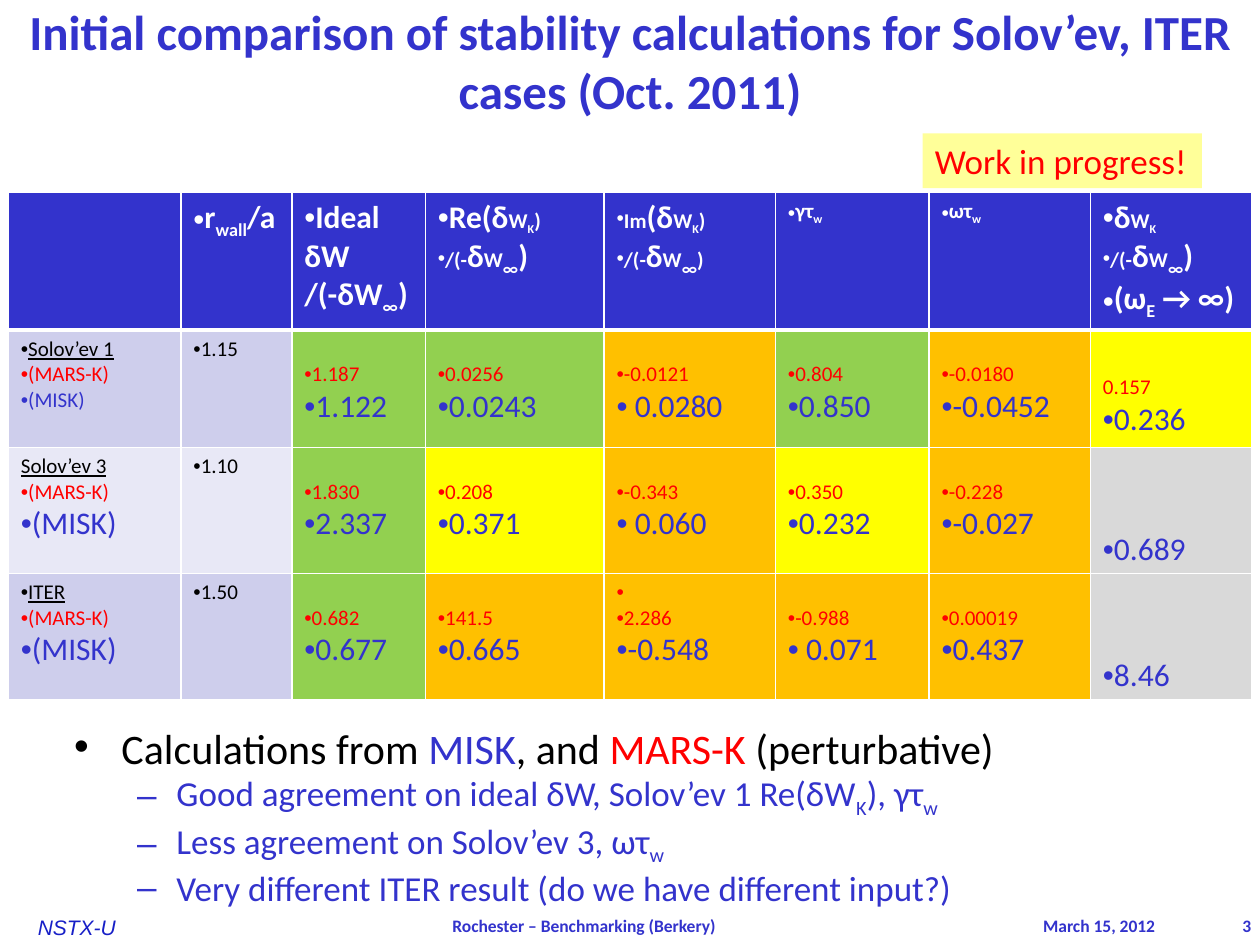
from pptx import Presentation
from pptx.dml.color import RGBColor as RGB
from pptx.enum.shapes import MSO_SHAPE as Shape
from pptx.enum.text import MSO_ANCHOR as Anchor, PP_ALIGN as Align
from pptx.oxml import parse_xml
from pptx.oxml.ns import nsdecls
from pptx.util import Pt


class Theme:
    face, alt = "Calibri", "Arial"
    blue, red, black, white = "3333CC", "FF0000", "000000", "FFFFFF"
    logo, note = "171FC7", "FFFF99"
    band = ["CECEEC", "E8E8F6", "CECEEC"]
    fill = {"G": "92D050", "Y": "FFFF00", "O": "FFC000", "N": "D9D9D9"}
    title, head, lead, item, big, small, foot = 28, 18, 24, 20, 18, 12, 10


T = Theme
LINE = 1.22  # line height per point of type

# Content. A run is (text, size, colour, flags): b bold, i italic, u underline, s subscript
TITLE = "Initial comparison of stability calculations for Solov’ev, ITER cases (Oct. 2011)"
NOTE = "Work in progress!"
FOOT = [  # text, box, alignment, size, colour, face, flags, anchor
    ("NSTX-U", (21.6, 522.7, 62.6, 14.4), Align.LEFT, T.small, T.logo, T.alt, "i", Anchor.TOP),
    ("Rochester – Benchmarking (Berkery)", (64, 518, 539.3, 21.6), Align.CENTER,
     T.foot, T.blue, T.face, "b", Anchor.MIDDLE),
    ("March 15, 2012", (504, 518, 156, 21.6), Align.RIGHT,
     T.foot, T.blue, T.face, "b", Anchor.MIDDLE),
    ("3", (559, 518, 156, 21.6), Align.RIGHT,
     T.foot, T.blue, T.face, "b", Anchor.MIDDLE),
]


def head(text, size=T.head, flags=""):
    return text, size, T.white, "b" + flags


# Header fragments shared by several columns
W = head("W", T.small)
K = head("K", T.small, "s")
INF = head("∞", T.head, "s")
END = head(")", T.small)
PER = [head("/(-", T.small), head("δ"), W, INF]
TAU = head("w", T.small, "s")

HEAD = [  # per column: lines of (bullet, runs)
    [],
    [("•", [head("r"), head("wall", T.head, "s"), head("/a")])],
    [("•", [head("Ideal δW")]), ("", [head("/(-δW"), INF, head(")")])],
    [("•", [head("Re(δ"), W, K, END]), ("•", PER + [head(")")])],
    [("•", [head("Im", T.small), head("(δ"), W, K, END]), ("•", PER + [END])],
    [("•", [head("γτ", T.small), TAU])],
    [("•", [head("ωτ", T.small), TAU])],
    [("•", [head("δ"), W, K]), ("•", PER + [head(")")]),
     ("•", [head("(ω"), head("E", T.head, "s"), head(" → ∞)")])],
]
ROWS = [  # case, bullet, MISK size, wall radius, (MARS-K, MISK, fill) per column
    ("Solov’ev 1", "•", T.small, "1.15", [
        ("1.187", "1.122", "G"), ("0.0256", "0.0243", "G"), ("-0.0121", " 0.0280", "O"),
        ("0.804", "0.850", "G"), ("-0.0180", "-0.0452", "O"), ("0.157", "0.236", "Y")]),
    ("Solov’ev 3", "", T.big, "1.10", [
        ("1.830", "2.337", "G"), ("0.208", "0.371", "Y"), ("-0.343", " 0.060", "O"),
        ("0.350", "0.232", "Y"), ("-0.228", "-0.027", "O"), ("", "0.689", "N")]),
    ("ITER", "•", T.big, "1.50", [
        ("0.682", "0.677", "G"), ("141.5", "0.665", "O"), ("2.286", "-0.548", "O"),
        ("-0.988", " 0.071", "O"), ("0.00019", "0.437", "O"), ("", "8.46", "N")]),
]
LONE = (2, 2)  # row and value column that open with a bare bullet
COLS = [98.6, 63.4, 76.3, 102.2, 97.9, 87.8, 92.2, 92.2]
HIGH = [78.3, 67, 72, 72]

LEAD = [("Calculations from ", T.black), ("MISK", T.blue), (", and ", T.black),
        ("MARS-K", T.red), (" (perturbative)", T.black)]
ITEMS = [
    [("Good agreement on ideal δW, Solov’ev 1 Re(δW", ""), ("K", "s"), ("), γτ", ""), ("w", "s")],
    [("Less agreement on Solov’ev 3, ωτ", ""), ("w", "s")],
    [("Very different ITER result (do we have different input?)", "")],
]


def put(obj, **vals):
    for name, val in vals.items():
        setattr(obj, name, val)


def write(frame, lines, face=T.face, align=Align.LEFT, dents=None):
    """Fill a frame with (bullet, runs) lines; dents holds (margin, indent) per line."""
    for n, (mark, runs) in enumerate(lines):
        par = frame.add_paragraph() if n else frame.paragraphs[0]
        props = par._p.get_or_add_pPr()
        left, first = dents[n] if dents else (0, 0)
        props.set("marL", str(Pt(left)))
        props.set("indent", str(Pt(first)))
        tags = [f'buFont {nsdecls("a")} typeface="{T.alt}"',
                f'buChar {nsdecls("a")} char="{mark}"'] if mark else [f'buNone {nsdecls("a")}']
        for tag in tags:
            props.append(parse_xml(f"<a:{tag}/>"))
        par.alignment = align
        for text, size, hue, flags in runs:
            run = par.add_run()
            run.text = text
            put(run.font, name=face, size=Pt(size), bold="b" in flags,
                italic="i" in flags, underline="u" in flags)
            run.font.color.rgb = RGB.from_string(hue)
            if "s" in flags:
                run._r.get_or_add_rPr().set("baseline", "-25000")


def box(rect, lines, anchor=Anchor.TOP, inset=None, **more):
    frame = slide.shapes.add_textbox(*map(Pt, rect)).text_frame
    put(frame, word_wrap=True, vertical_anchor=anchor)
    if inset is not None:
        for side in ("left", "top", "right", "bottom"):
            setattr(frame, "margin_" + side, Pt(inset))
    write(frame, lines, **more)
    return frame


def paint(cell, hue, top=1, base=1):
    """Fill a cell and rule its four sides in white."""
    cell.fill.solid()
    cell.fill.fore_color.rgb = RGB.from_string(hue)
    props = cell._tc.get_or_add_tcPr()
    for n, (side, wide) in enumerate(zip("LRTB", (1, 1, top, base))):
        props.insert(n, parse_xml(
            f'<a:ln{side} {nsdecls("a")} w="{Pt(wide)}"><a:solidFill>'
            f'<a:srgbClr val="{T.white}"/></a:solidFill></a:ln{side}>'))


deck = Presentation()
put(deck, slide_width=Pt(720), slide_height=Pt(540))
slide = deck.slides.add_slide(deck.slide_layouts[6])

# Footer and title
for text, rect, align, size, hue, face, flags, anchor in FOOT:
    box(rect, [("", [(text, size, hue, flags)])], anchor, 0, face=face, align=align)
box((0, 0, 720, 69.5), [("", [(TITLE, T.title, T.blue, "b")])], Anchor.MIDDLE,
    align=Align.CENTER)

# Findings
lines = [("•", [(text, T.lead, hue, "") for text, hue in LEAD])]
lines += [("–", [(text, T.item, T.blue, flags) for text, flags in item]) for item in ITEMS]
body = box((35.3, 417.1, 655.2, 92.9), lines,
           dents=[(27, -27)] + [(58.5, -22.5)] * len(ITEMS))
body.paragraphs[0].line_spacing = 0.7
for par in body.paragraphs[1:]:
    par.level = 1

# Status note
note = slide.shapes.add_shape(Shape.RECTANGLE, Pt(527.2), Pt(76.2), Pt(159.6), Pt(31.3))
note.shadow.inherit = False
note.fill.solid()
note.fill.fore_color.rgb = RGB.from_string(T.note)
note.line.fill.background()
put(note.text_frame, word_wrap=False, vertical_anchor=Anchor.TOP)
write(note.text_frame, [("", [(NOTE, T.item, T.red, "")])])

# Table grid and header
grid = slide.shapes.add_table(len(HIGH), len(COLS), Pt(4.75), Pt(109.9),
                              Pt(sum(COLS)), Pt(sum(HIGH))).table
put(grid, first_row=True, horz_banding=False)
for col, wide in zip(grid.columns, COLS):
    col.width = Pt(wide)
for row, high in zip(grid.rows, HIGH):
    row.height = Pt(high)
for c, lines in enumerate(HEAD):
    paint(grid.cell(0, c), T.blue, base=3)
    write(grid.cell(0, c).text_frame, lines)

# Table body: values start below the case name, set down by the cell's top margin
for r, (case, mark, size, wall, vals) in enumerate(ROWS):
    top = 1 if r else 3
    names = [(mark, [(case, T.small, T.black, "u")]),
             ("•", [("(MARS-K)", T.small, T.red, "")]),
             ("•", [("(MISK)", size, T.blue, "")])]
    for c, lines in enumerate([names, [("•", [(wall, T.small, T.black, "")])]]):
        paint(grid.cell(r + 1, c), T.band[r], top)
        write(grid.cell(r + 1, c).text_frame, lines)
    for c, (mars, misk, key) in enumerate(vals):
        cell = grid.cell(r + 1, c + 2)
        paint(cell, T.fill[key], top)
        last = c == len(vals) - 1
        lines = [("•", [(misk, T.big, T.blue, "")])]
        if mars:
            lines.insert(0, ("" if last else "•", [(mars, T.small, T.red, "")]))
        drop = (T.big if last else T.small) * LINE * (1 if mars else 2)
        if (r, c) == LONE:
            lines.insert(0, ("•", [(" ", T.small, T.red, "")]))
            drop = 0
        put(cell, margin_top=Pt(3.6 + drop), margin_bottom=0)
        write(cell.text_frame, lines)

deck.save("out.pptx")
